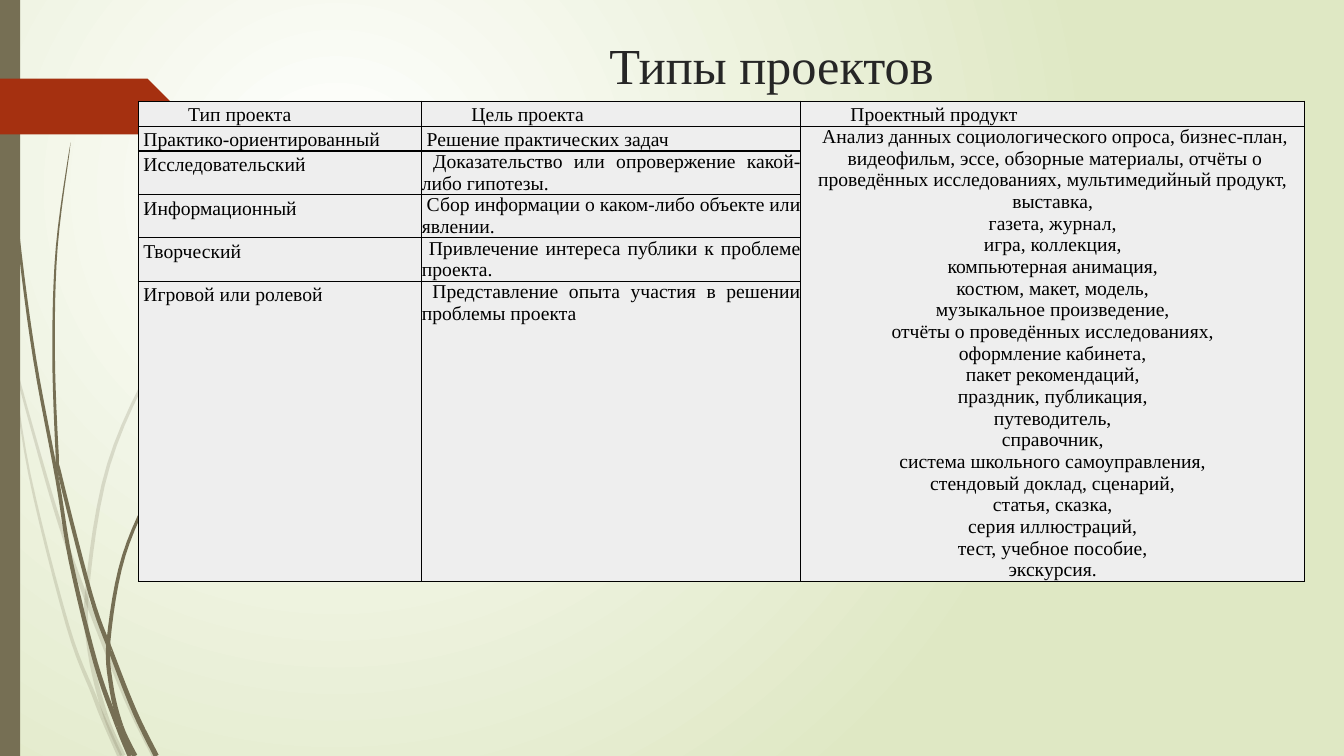
import math

from lxml import etree
from pptx import Presentation
from pptx.dml import color
from pptx.enum import shapes, text
from pptx.oxml import ns
from pptx.util import Cm, Pt

FONT = "Times New Roman"
OLIVE, RED, GREY = "766F54", "A53010", "EEEEEE"
MID, JUST = text.PP_ALIGN.CENTER, text.PP_ALIGN.JUSTIFY

# Grass stems: the knots where a blade is cut, then its centre line in centimetres.
PALE = [
    ([1, 4], [(0, 7.4), (.3, 8.9), (.95, 11.3), (1.52, 13.23), (2.18, 15.1),
              (3.18, 17.6), (3.89, 19.05)]),
    ([4], [(.28, 8.9), (.74, 11.94), (1.7, 15.75), (2.36, 17.5), (2.6, 18.1),
           (3.02, 19.05)]),
    ([4, 6], [(7.92, 3.89), (5.8, 6.22), (4.04, 8.84), (2.74, 11.7), (2.2, 14.83),
              (2.26, 16.4), (2.65, 18), (3.1, 19.05)]),
]
DARK = [
    ([4, 7], [(.09, 0), (.19, 2.8), (.46, 5.92), (.87, 9.02), (1.45, 12.12),
              (1.78, 14.12), (2.41, 16.71), (2.97, 18.3), (3.28, 19.05)]),
    ([4, 6], [(1.78, 3.58), (1.43, 6.22), (1.35, 8.86), (1.44, 11.43), (1.52, 12),
              (2.29, 15), (2.79, 16.4), (3.4, 17.95), (3.94, 19.05)]),
    ([4, 6], [(6.6, 8.74), (5.18, 10.29), (3.99, 12.07), (3.12, 14), (2.74, 16.1),
              (2.8, 17.27), (3.05, 18.3), (3.4, 19.05)]),
]
STEPS = 6

HEADS = ["Тип проекта", "Цель проекта", "Проектный продукт"]
TYPES = [
    (" Практико-ориентированный", " Решение практических задач"),
    (" Исследовательский", " Доказательство или опровержение какой-либо гипотезы."),
    (" Информационный", " Сбор информации о каком-либо объекте или явлении."),
    (" Творческий", " Привлечение интереса публики к проблеме проекта."),
    (" Игровой или ролевой", " Представление опыта участия в решении проблемы проекта"),
]
GOODS = [
    " Анализ данных социологического опроса, бизнес-план,",
    " видеофильм, эссе, обзорные материалы, отчёты о проведённых исследованиях, "
    "мультимедийный продукт, выставка,",
    "газета, журнал,",
    "игра, коллекция,",
    "компьютерная анимация,",
    "костюм, макет, модель,",
    "музыкальное произведение,",
    "отчёты о проведённых исследованиях,",
    "оформление кабинета,",
    "пакет рекомендаций,",
    "праздник, публикация,",
    "путеводитель,",
    "справочник,",
    "система школьного самоуправления,",
    "стендовый доклад, сценарий,",
    "статья, сказка,",
    "серия иллюстраций,",
    "тест, учебное пособие,",
    "экскурсия.",
]
COLS = [7.14, 9.55, 12.7]
ROWS = [.3, .61, .94, .61, .61, 6.2]


def rgb(code):
    return color.RGBColor.from_string(code)


def write(frame, lines, size=14, ink="000000", align=JUST, gap=1.0, indent=0):
    for i, line in enumerate(lines):
        para = frame.paragraphs[0] if i == 0 else frame.add_paragraph()
        para.alignment, para.line_spacing = align, gap
        if indent:
            props = para._p.get_or_add_pPr()
            props.set("marL", "0")
            props.set("indent", str(Cm(indent)))
        run = para.add_run()
        run.text = line
        run.font.name, run.font.size = FONT, Pt(size)
        run.font.color.rgb = rgb(ink)


def paint(shape, code, alpha=None):
    shape.shadow.inherit = False
    shape.line.fill.background()
    shape.fill.solid()
    shape.fill.fore_color.rgb = rgb(code)
    if alpha:
        tone = shape._element.spPr.find(".//" + ns.qn("a:srgbClr"))
        etree.SubElement(tone, ns.qn("a:alpha")).set("val", str(alpha * 1000))


def glow(slide):
    """Fill the background with a round gradient from the upper left."""
    fill = slide.background.fill
    fill.gradient()
    for stop, code in zip(fill.gradient_stops, ("FFFFFF", "DFE8C4")):
        stop.color.rgb = rgb(code)
    grad = slide._element.find(".//" + ns.qn("a:gradFill"))
    grad.remove(grad.find(ns.qn("a:lin")))
    ring = etree.SubElement(grad, ns.qn("a:path"), {"path": "circle"})
    etree.SubElement(ring, ns.qn("a:fillToRect"),
                     {"l": "50000", "t": "50000", "r": "100000", "b": "100000"})


def smooth(knots):
    """Return points of a Catmull-Rom curve through the knots."""
    ends = [knots[0], *knots, knots[-1]]
    curve = []
    for a, b, c, d in zip(ends, ends[1:], ends[2:], ends[3:]):
        for t in (n / STEPS for n in range(STEPS)):
            curve.append(tuple(
                (2 * q + (r - p) * t + (2 * p - 5 * q + 4 * r - s) * t ** 2
                 + (3 * q - p - 3 * r + s) * t ** 3) / 2
                for p, q, r, s in zip(a, b, c, d)))
    return curve + [knots[-1]]


def stem(slide, cuts, knots, alpha=None, width=.13):
    """Draw a blade, part by part, that grows wider towards its foot."""
    curve = smooth(knots)
    last = len(curve) - 1
    near, far = [], []
    for i, (x, y) in enumerate(curve):
        (x0, y0), (x1, y1) = curve[max(i - 1, 0)], curve[min(i + 1, last)]
        half = width / 2 * math.sqrt(i / last) / math.hypot(x1 - x0, y1 - y0)
        dx, dy = (y1 - y0) * half, (x0 - x1) * half
        near.append((Cm(x + dx), Cm(y + dy)))
        far.append((Cm(x - dx), Cm(y - dy)))
    ends = [0, *(cut * STEPS for cut in cuts), last]
    for a, b in zip(ends, ends[1:]):
        edge = near[a:b + 1] + far[a:b + 1][::-1]
        pen = slide.shapes.build_freeform(*edge[0])
        pen.add_line_segments(edge[1:], close=True)
        paint(pen.convert_to_shape(), OLIVE, alpha)


def block(slide, kind, box, code):
    paint(slide.shapes.add_shape(kind, *map(Cm, box)), code)


def frame(cell):
    """Give a cell its fill, thin black borders and no margins."""
    cell.margin_left = cell.margin_right = cell.margin_top = cell.margin_bottom = 0
    cell.fill.solid()
    cell.fill.fore_color.rgb = rgb(GREY)
    props = cell._tc.get_or_add_tcPr()
    for i, side in enumerate(("lnL", "lnR", "lnT", "lnB")):
        line = etree.Element(ns.qn("a:" + side), {"w": str(Pt(1))})
        solid = etree.SubElement(line, ns.qn("a:solidFill"))
        etree.SubElement(solid, ns.qn("a:srgbClr"), {"val": "000000"})
        props.insert(i, line)


def grid(slide):
    holder = slide.shapes.add_table(
        len(ROWS), len(COLS), Cm(3.49), Cm(2.55), Cm(sum(COLS)), Cm(sum(ROWS)))
    table = holder.table
    table.first_row = table.horz_banding = False
    for col, width in zip(table.columns, COLS):
        col.width = Cm(width)
    for row, height in zip(table.rows, ROWS):
        row.height = Cm(height)
    holder.height = Cm(13.08)
    for cell in table.iter_cells():
        frame(cell)
    table.cell(1, 2).merge(table.cell(len(TYPES), 2))
    for c, name in enumerate(HEADS):
        write(table.cell(0, c).text_frame, [name], gap=1.15, indent=1.25)
    for r, (kind, goal) in enumerate(TYPES, 1):
        write(table.cell(r, 0).text_frame, [kind], gap=1.15)
        write(table.cell(r, 1).text_frame, [goal], gap=1.15 if r == 1 else 1.0)
    write(table.cell(1, 2).text_frame, GOODS, align=MID)


def head(slide, words):
    title = slide.shapes.title
    title.left, title.top, title.width, title.height = map(Cm, (7.06, .71, 24.77, 1.83))
    title.text_frame.vertical_anchor = text.MSO_ANCHOR.MIDDLE
    write(title.text_frame, [words], size=36, ink="262626", align=MID)


def main():
    deck = Presentation()
    deck.slide_width, deck.slide_height = Cm(33.87), Cm(19.05)
    slide = deck.slides.add_slide(deck.slide_layouts[5])
    glow(slide)
    for cuts, knots in PALE:
        stem(slide, cuts, knots, alpha=20)
    for cuts, knots in DARK:
        stem(slide, cuts, knots)
    block(slide, shapes.MSO_SHAPE.RECTANGLE, (0, 0, .51, 19.05), OLIVE)
    block(slide, shapes.MSO_SHAPE.PENTAGON, (0, 1.98, 4.42, 1.41), RED)
    head(slide, "Типы проектов")
    grid(slide)
    deck.save("out.pptx")


if __name__ == "__main__":
    main()
